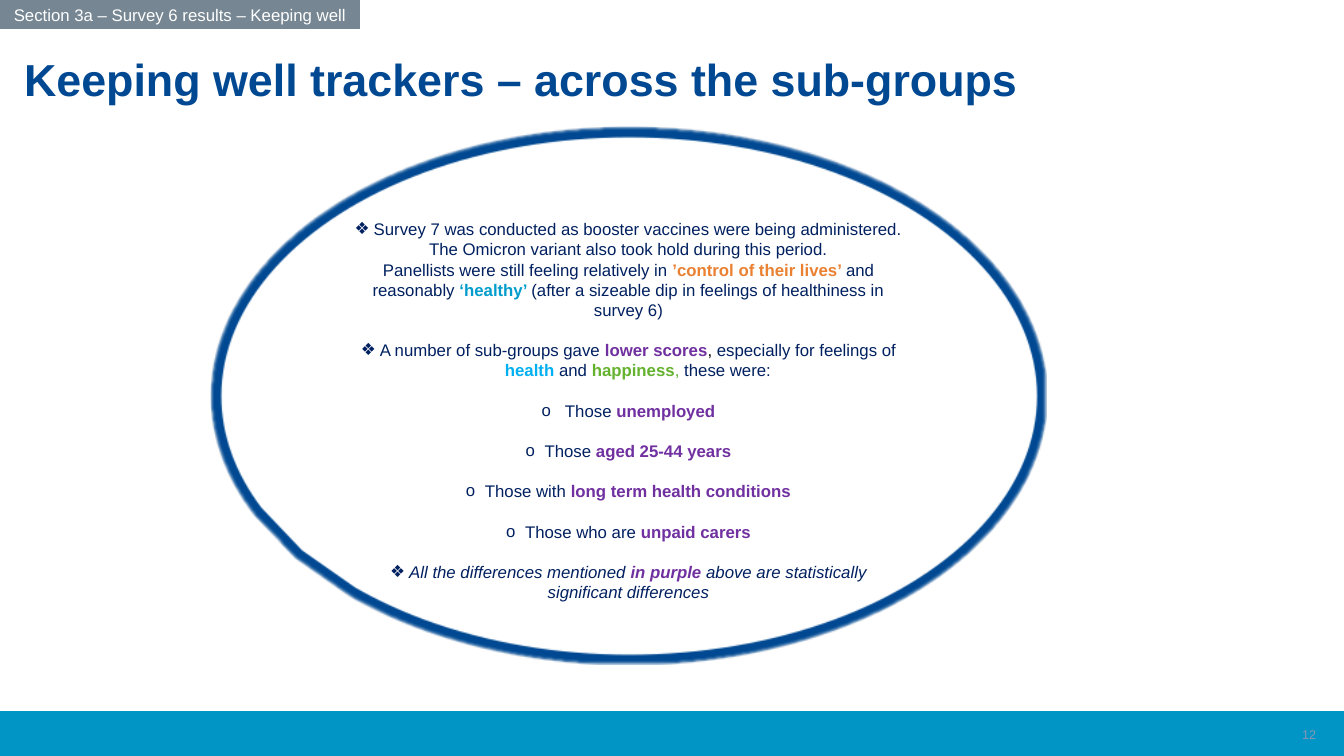
import pptx
import pptx.dml.color
import pptx.enum.shapes
import pptx.enum.text
import pptx.oxml
import pptx.oxml.ns
import pptx.util
from lxml import etree

RGBColor = pptx.dml.color.RGBColor
SHAPE = pptx.enum.shapes.MSO_SHAPE
ALIGN = pptx.enum.text.PP_ALIGN
ANCHOR = pptx.enum.text.MSO_ANCHOR
Pt = pptx.util.Pt
qn = pptx.oxml.ns.qn

EMU_PER_PX = 914400 / 100.8
WHITE = RGBColor(0xFF, 0xFF, 0xFF)
BLUE = RGBColor(0x00, 0x49, 0x92)
FOOTER_BLUE = RGBColor(0x00, 0x95, 0xC4)
PAGE_GREY = RGBColor(0x8C, 0x95, 0xB6)
TAB_GREY = RGBColor(0x76, 0x86, 0x92)
NAVY = RGBColor(0x00, 0x20, 0x60)
ORANGE = RGBColor(0xEA, 0x81, 0x32)
TEAL = RGBColor(0x00, 0x9D, 0xCC)
PURPLE = RGBColor(0x70, 0x30, 0xA0)
BLACK = RGBColor(0x08, 0x08, 0x08)
SKY = RGBColor(0x00, 0xB0, 0xF0)
GREEN = RGBColor(0x64, 0xB2, 0x2D)


def px(length):
    return round(length * EMU_PER_PX)


def write(paragraph, text, size, color, bold=False, italic=False):
    """Append one formatted run to the paragraph."""
    run = paragraph.add_run()
    run.text = text
    run.font.name = "Arial"
    run.font.size = Pt(size)
    run.font.color.rgb = color
    run.font.bold = bold
    run.font.italic = italic


deck = pptx.Presentation()
deck.slide_width, deck.slide_height = px(1344), px(756)
slide = deck.slides.add_slide(deck.slide_layouts[6])
shapes = slide.shapes

# Footer band, section tab and callout
footer = shapes.add_shape(SHAPE.RECTANGLE, 0, px(712), px(1344), px(44))
section_tab = shapes.add_shape(SHAPE.RECTANGLE, 0, 0, px(360), px(29))
callout = shapes.add_shape(SHAPE.OVAL_CALLOUT, px(216), px(132), px(825), px(527))
for shape, fill in ((footer, FOOTER_BLUE), (section_tab, TAB_GREY), (callout, WHITE)):
    shape.shadow.inherit = False
    shape.fill.solid()
    shape.fill.fore_color.rgb = fill
    shape.line.fill.background()
footer.line.color.rgb = FOOTER_BLUE
footer.line.width = Pt(1)
callout.line.color.rgb = BLUE
callout.line.width = Pt(7.75)
callout.adjustments[0] = -0.4
callout.adjustments[1] = 0.3
effects = callout._element.spPr.find(qn("a:effectLst"))
etree.SubElement(effects, qn("a:softEdge"), rad="12700")

# Single-line texts
page_number = shapes.add_textbox(px(1024), px(714), px(302), px(40))
title = shapes.add_textbox(0, px(47), px(1294), px(114))
title.text_frame.margin_left = title.text_frame.margin_right = px(24)
for box, text, size, color, align, anchor in (
    (page_number, "12", 9, PAGE_GREY, ALIGN.RIGHT, ANCHOR.MIDDLE),
    (title, "Keeping well trackers – across the sub-groups", 32, BLUE, ALIGN.LEFT, ANCHOR.TOP),
    (section_tab, "Section 3a – Survey 6 results – Keeping well", 12, WHITE, ALIGN.CENTER, ANCHOR.MIDDLE),
):
    box.text_frame.word_wrap = True
    box.text_frame.vertical_anchor = anchor
    line = box.text_frame.paragraphs[0]
    line.alignment = align
    write(line, text, size, color, bold=box is title)

# Findings: bullet, gap above, italic, then (text, colour) pieces; non-body colours are bold
findings = [
    ("❖", False, False, [("Survey 7 was conducted as booster vaccines were being administered.", NAVY)]),
    (None, False, False, [("The Omicron variant also took hold during this period.", NAVY)]),
    (None, False, False, [
        ("Panellists were still feeling relatively in ", NAVY), ("’control of their lives’ ", ORANGE),
        ("and reasonably ", NAVY), ("‘healthy’ ", TEAL),
        ("(after a sizeable dip in feelings of healthiness in survey 6)", NAVY)]),
    ("❖", True, False, [
        ("A number of sub-groups gave ", NAVY), ("lower scores", PURPLE), (", ", BLACK),
        ("especially for feelings of ", NAVY), ("health", SKY), (" and ", NAVY),
        ("happiness", GREEN), (",", GREEN), (" these were:", NAVY)]),
    ("o", True, False, [(" Those ", NAVY), ("unemployed", PURPLE)]),
    ("o", True, False, [("Those ", NAVY), ("aged 25-44 years", PURPLE)]),
    ("o", True, False, [("Those with ", NAVY), ("long term health conditions", PURPLE)]),
    ("o", True, False, [("Those who are ", NAVY), ("unpaid carers", PURPLE)]),
    ("❖", True, True, [
        ("All the differences mentioned ", NAVY), ("in purple ", PURPLE),
        ("above are statistically", NAVY)]),
    (None, False, True, [("significant differences", NAVY)]),
]
frame = callout.text_frame
frame.word_wrap = True
frame.vertical_anchor = ANCHOR.MIDDLE
frame.margin_top = px(35)
for index, (bullet, gap_above, italic, pieces) in enumerate(findings):
    paragraph = frame.paragraphs[0] if index == 0 else frame.add_paragraph()
    paragraph.alignment = ALIGN.CENTER
    if gap_above:
        paragraph.space_before = Pt(14.4)
    if bullet:
        properties = paragraph._p.get_or_add_pPr()
        properties.set("marL", str(px(19)))
        properties.set("indent", str(px(-19)))
        etree.SubElement(properties, qn("a:buFont"), typeface="Arial")
        etree.SubElement(properties, qn("a:buChar"), char=bullet)
    for text, color in pieces:
        bold = color not in (NAVY, BLACK) and text != ","
        write(paragraph, text, 12, color, bold, italic)

deck.save("out.pptx")
